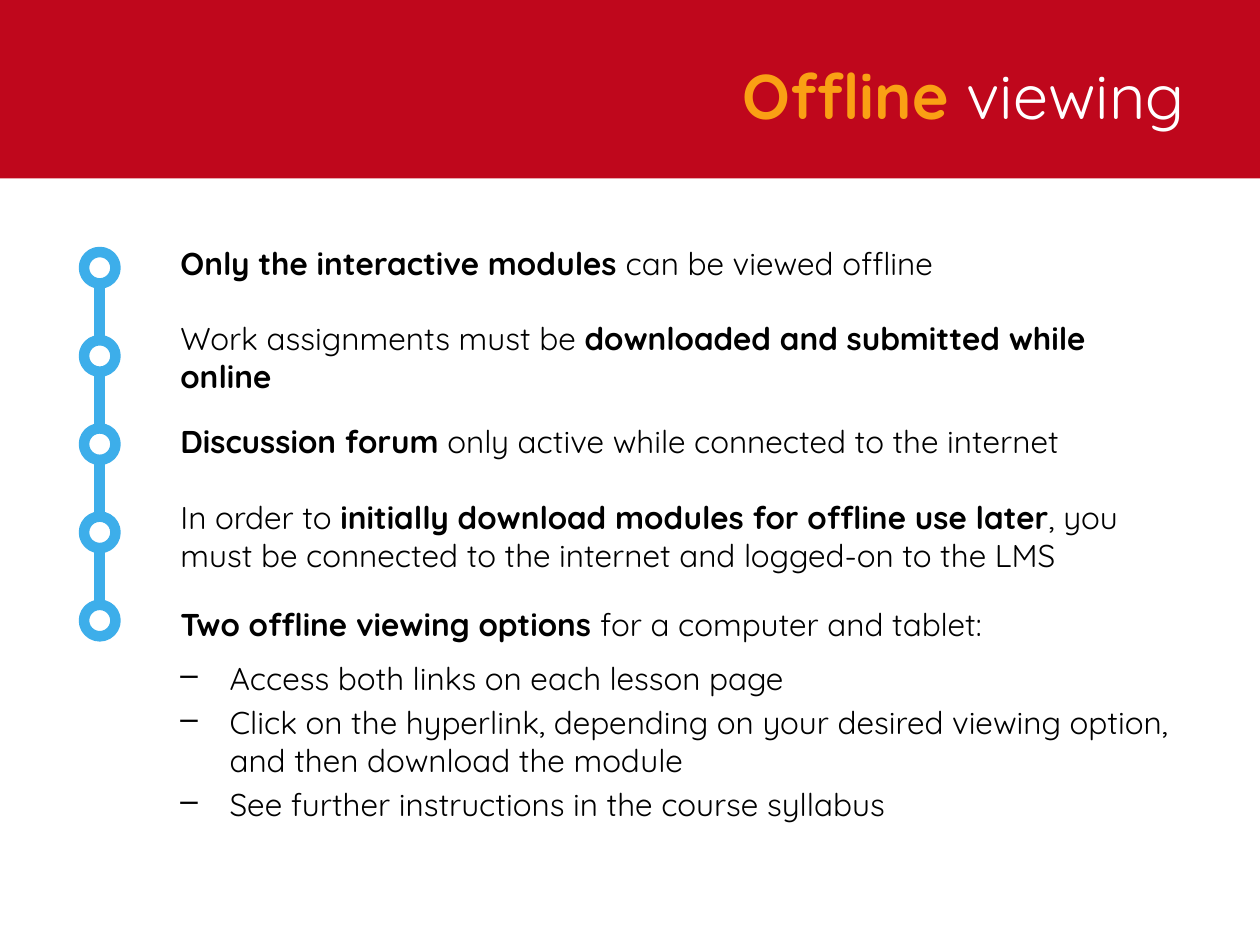
from lxml import etree
from pptx import Presentation
from pptx.dml.color import RGBColor
from pptx.enum.shapes import MSO_CONNECTOR, MSO_SHAPE
from pptx.enum.text import MSO_ANCHOR, PP_ALIGN
from pptx.oxml.ns import qn
from pptx.util import Pt

RECT, OVAL = MSO_SHAPE.RECTANGLE, MSO_SHAPE.OVAL
STRAIGHT = MSO_CONNECTOR.STRAIGHT
TOP, MIDDLE = MSO_ANCHOR.TOP, MSO_ANCHOR.MIDDLE
LEFT, RIGHT = PP_ALIGN.LEFT, PP_ALIGN.RIGHT

FONT = "Quicksand"
COLORS = {
    "red": "BF071C",
    "orange": "FAA014",
    "blue": "3DAEEA",
    "white": "FFFFFF",
    "black": "000000",
}

DOT_LEFT, DOT_TOP, DOT_SIZE, DOT_PITCH, DOT_COUNT = 48, 144, 18, 50.4, 5
STROKE = 6
INDENT = 28.1

POINTS = [
    (132, 36, MIDDLE, [("Only the interactive modules ", True),
                       ("can be viewed offline", False)]),
    (186, 36, MIDDLE, [("Work assignments must be ", False),
                       ("downloaded and submitted while online", True)]),
    (234, 36, MIDDLE, [("Discussion forum ", True),
                       ("only active while connected to the internet", False)]),
    (282, 48, MIDDLE, [("In order to ", False),
                       ("initially download modules for offline use later", True),
                       (", you must be connected to the internet "
                        "and logged-on to the LMS", False)]),
    (342, 36, TOP, [("Two offline viewing options ", True),
                    ("for a computer and tablet:", False)]),
]
OPTIONS = [
    "Access both links on each lesson page",
    "Click on the hyperlink, depending on your desired viewing option, "
    "and then download the module",
    "See further instructions in the course syllabus",
]


def rgb(name):
    return RGBColor.from_string(COLORS[name])


def add_run(p, text, size=18, color="black", bold=False):
    r = p.add_run()
    r.text = text
    r.font.name = FONT
    r.font.size = Pt(size)
    r.font.bold = bold
    r.font.color.rgb = rgb(color)


def add_box(s, left, top, width, height, anchor=MIDDLE, align=LEFT):
    tf = s.shapes.add_textbox(Pt(left), Pt(top), Pt(width), Pt(height)).text_frame
    tf.word_wrap = True
    tf.vertical_anchor = anchor
    tf.paragraphs[0].alignment = align
    return tf


def add_shape(s, kind, left, top, width, height, fill, line=None):
    sp = s.shapes.add_shape(kind, Pt(left), Pt(top), Pt(width), Pt(height))
    sp.shadow.inherit = False
    sp.fill.solid()
    sp.fill.fore_color.rgb = rgb(fill)
    if line:
        sp.line.color.rgb = rgb(line)
        sp.line.width = Pt(STROKE)
    else:
        sp.line.fill.background()


def add_link(s, x, top, bottom):
    cxn = s.shapes.add_connector(STRAIGHT, Pt(x), Pt(top), Pt(x), Pt(bottom))
    cxn.line.color.rgb = rgb("blue")
    cxn.line.width = Pt(STROKE)
    etree.SubElement(cxn._element.spPr, qn("a:effectLst"))


def add_timeline(s):
    for i in range(DOT_COUNT):
        top = DOT_TOP + i * DOT_PITCH
        add_shape(s, OVAL, DOT_LEFT, top, DOT_SIZE, DOT_SIZE, "white", "blue")
        if i:
            add_link(s, DOT_LEFT + DOT_SIZE / 2, top - DOT_PITCH + DOT_SIZE, top)


def add_point(s, top, height, anchor, runs):
    tf = add_box(s, 96, top, 588, height, anchor)
    p = tf.paragraphs[0]
    p.space_before = Pt(3.6)
    p.space_after = Pt(6)
    for text, bold in runs:
        add_run(p, text, bold=bold)
    return tf


def add_option(tf, text):
    p = tf.add_paragraph()
    p.level = 1
    p.space_before = Pt(3.6)
    pPr = p._p.get_or_add_pPr()
    pPr.set("marL", str(Pt(INDENT)))
    pPr.set("indent", str(-Pt(INDENT)))
    etree.SubElement(pPr, qn("a:buChar"), char="–")
    add_run(p, text)


def main():
    prs = Presentation()
    prs.slide_width, prs.slide_height = Pt(720), Pt(540)
    s = prs.slides.add_slide(prs.slide_layouts[6])

    add_shape(s, RECT, 0, 0, 720, 102, "red")
    title = add_box(s, 36, 18, 648, 72, align=RIGHT).paragraphs[0]
    add_run(title, "Offline ", size=36, color="orange", bold=True)
    add_run(title, "viewing", size=36, color="white")

    add_timeline(s)
    for point in POINTS:
        tf = add_point(s, *point)
    for text in OPTIONS:
        add_option(tf, text)

    prs.save("out.pptx")


if __name__ == "__main__":
    main()
